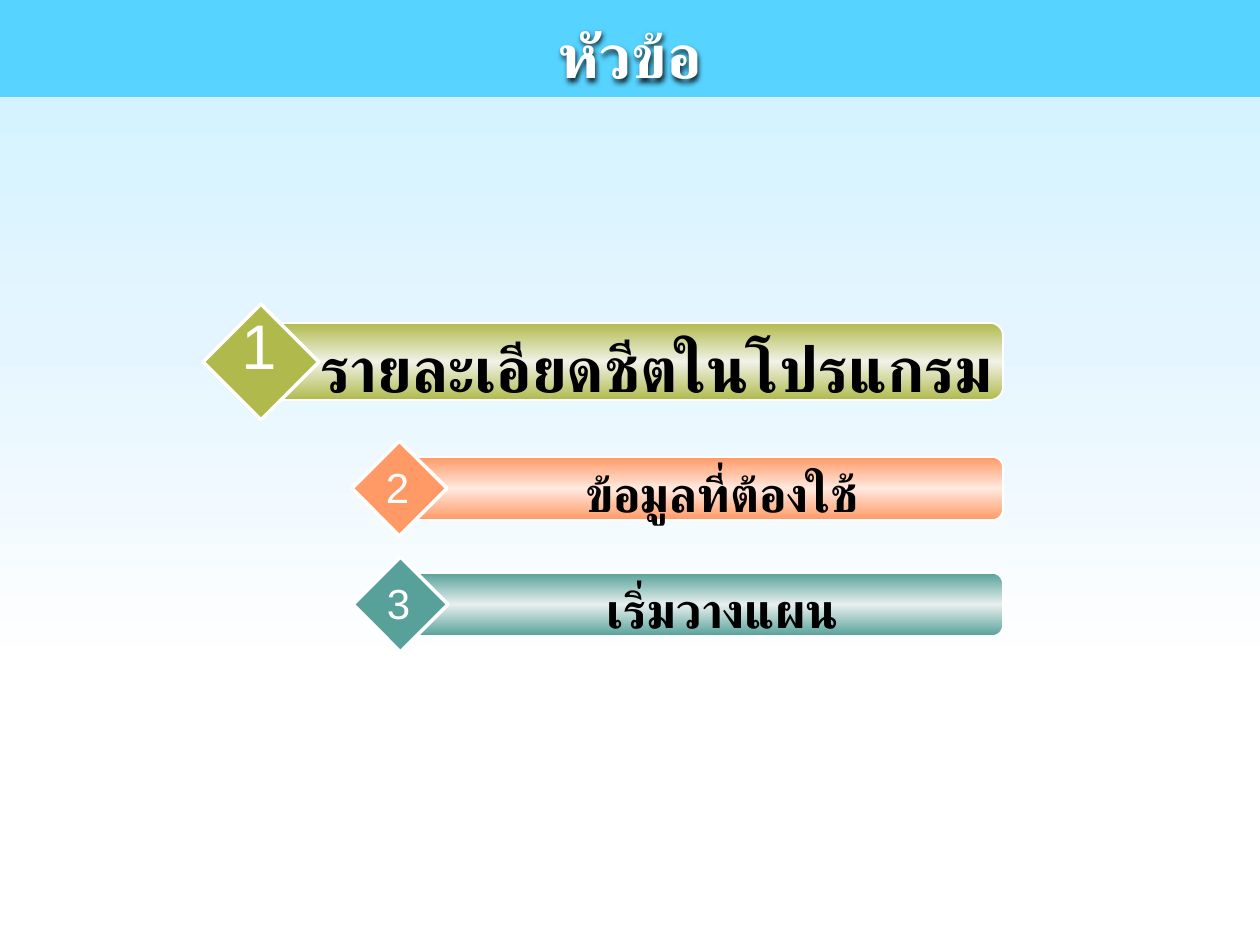
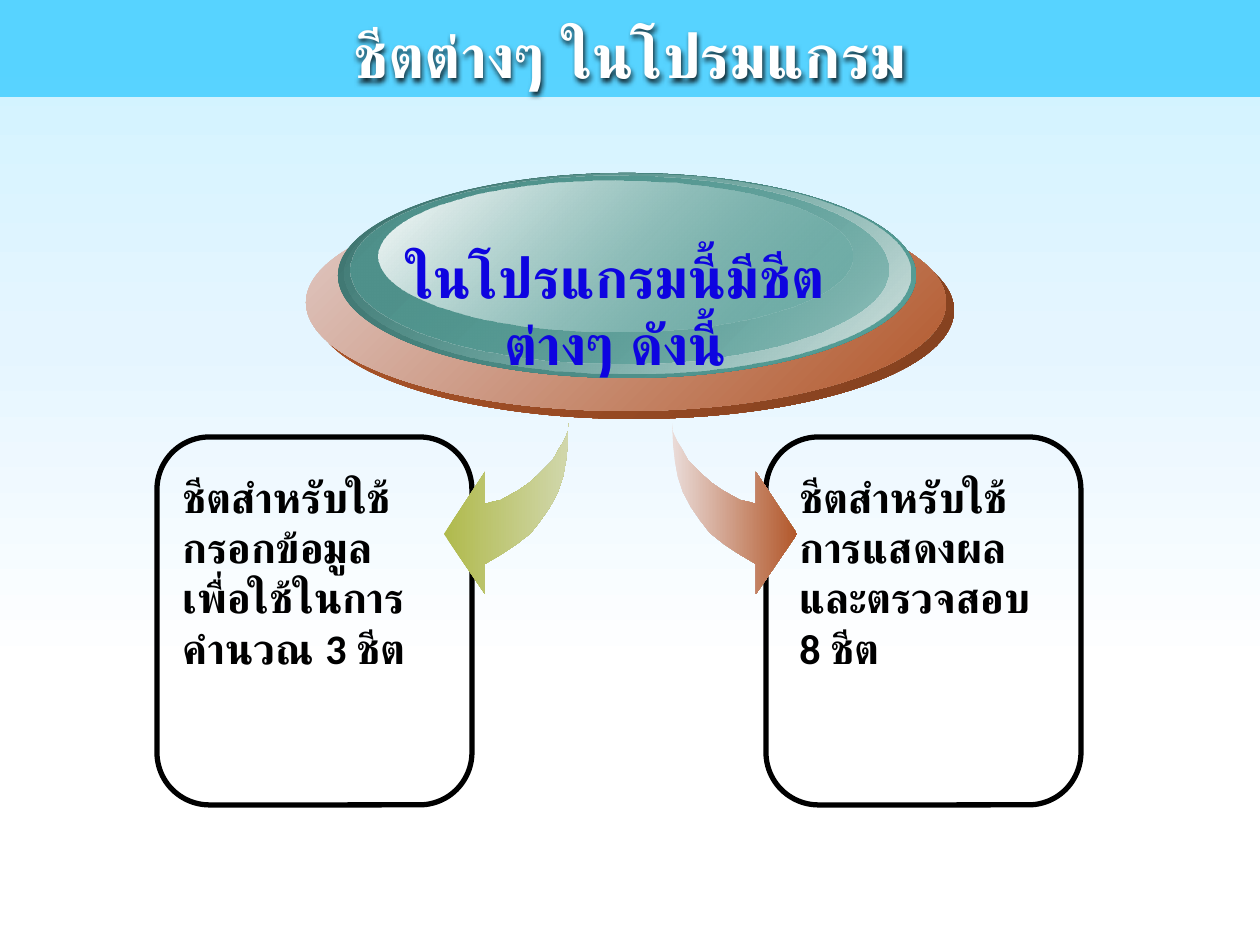
from lxml import etree
from pptx import Presentation
from pptx import util as u
from pptx.dml import color
from pptx.enum import shapes, text
from pptx.oxml import ns

PX = 914400 / 126
PAGE_WIDTH, PAGE_HEIGHT = 1260, 945
COLORS = {
    "band": "0DC0FF", "white": "FFFFFF", "black": "000000", "blue": "0E04E0",
    "sky": "D1F3FF", "pale_sky": "E5F5FF",
    "olive": "B0BA4C", "olive_light": "F1F2E8", "olive_soft": "D1D7AC",
    "teal": "57A19A", "teal_light": "E8EFEE", "teal_deep": "3E736E",
    "teal_mid": "4F918B", "teal_soft": "D8E4E2",
    "orange": "FF9966", "orange_light": "FFE9DF",
    "rust": "B2572A", "rust_deep": "82401F", "rust_soft": "E1CBC7", "rust_pale": "EADCD9",
}
TITLE = {"size": u.Pt(35), "bold": True}
LABEL = {"size": u.Pt(28), "bold": True}
LABEL_LARGE = {"size": u.Pt(36), "bold": True}
NUMBER = {"size": u.Pt(24)}
NUMBER_LARGE = {"size": u.Pt(36)}
CARD = {"size": u.Pt(24), "bold": True}
HEADING = {"size": u.Pt(32), "bold": True}
ROWS = [
    ("1", "รายละเอียดชีตในโปรแกรม", "olive", (203, 304, 116), -4, NUMBER_LARGE, LABEL_LARGE),
    ("2", "ข้อมูลที่ต้องใช้", "orange", (352, 441, 95), 14, NUMBER, LABEL),
    ("3", "เริ่มวางแผน", "teal", (353, 557, 95), 14, NUMBER, LABEL),
]
DISC_LAYERS = [
    ((61, 29, 640, 217), [(0, "rust", 100), (100, "rust_deep", 100)]),
    ((53, 21, 640, 217), [(0, "rust_soft", 100), (100, "rust", 100)]),
    ((85, 0, 578, 205), [(0, "teal_deep", 100), (100, "teal", 100)]),
    ((92, 1, 565, 200), [(0, "teal", 0), (100, "teal_soft", 100)]),
    ((97, 3, 538, 188), [(0, "teal_mid", 100), (100, "teal", 48)]),
    ((126, 8, 473, 151), [(0, "white", 100), (100, "teal", 38)]),
]
ARROW_POINTS = [
    (0, 0), (1, 20), (3, 38), (6, 54), (11, 69), (19, 84), (28, 97), (38, 110), (52, 121),
    (67, 131), (84, 141), (84, 171), (125, 111), (84, 49), (84, 81), (77, 79), (68, 77),
    (59, 72), (50, 67), (40, 60), (32, 53), (24, 45), (16, 37), (10, 26), (5, 18), (1, 9),
]
ARROW_WIDTH = 125


def emu(*lengths):
    return [u.Emu(round(length * PX)) for length in lengths]


def rgb(name):
    return color.RGBColor.from_string(COLORS[name])


def add_node(parent, tag, **values):
    return etree.SubElement(parent, ns.qn(tag), {key: str(value) for key, value in values.items()})


def add_alpha(node, percent):
    add_node(node, "a:alpha", val=percent * 1000)


def paint_gradient(fill, element, stops, angle):
    fill.gradient()
    gradient = next(element.iter(ns.qn("a:gradFill")))
    for child in list(gradient):
        gradient.remove(child)
    stop_list = add_node(gradient, "a:gsLst")
    for position, name, alpha in stops:
        stop = add_node(stop_list, "a:gs", pos=position * 1000)
        swatch = add_node(stop, "a:srgbClr", val=COLORS[name])
        if alpha < 100:
            add_alpha(swatch, alpha)
    add_node(gradient, "a:lin", ang=angle * 60000, scaled=0)


def style_line(shape, name=None, width=0):
    shape.shadow.inherit = False
    if name:
        shape.line.color.rgb = rgb(name)
        shape.line.width = u.Pt(width)
    else:
        shape.line.fill.background()


def add_preset(page, kind, box, line=None, width=0):
    shape = page.shapes.add_shape(kind, *emu(*box))
    style_line(shape, line, width)
    return shape


def write_text(frame, words, style, name, family="Calibri", align=text.PP_ALIGN.CENTER, wrap=True):
    for key, value in {"word_wrap": wrap, "auto_size": text.MSO_AUTO_SIZE.NONE,
                       "vertical_anchor": text.MSO_ANCHOR.TOP}.items():
        setattr(frame, key, value)
    para = frame.paragraphs[0]
    para.alignment = align
    span = para.add_run()
    span.text = words
    for key, value in {"name": family, **style}.items():
        setattr(span.font, key, value)
    span.font.color.rgb = rgb(name)
    add_node(span.font._element, "a:cs", typeface="Arial")


def add_text(page, box, *words, **options):
    write_text(page.shapes.add_textbox(*emu(*box)).text_frame, *words, **options)


def add_page(deck, words):
    page = deck.slides.add_slide(deck.slide_layouts[5])
    band = add_preset(page, shapes.MSO_SHAPE.RECTANGLE, (0, 0, PAGE_WIDTH, 97))
    band.fill.solid()
    band.fill.fore_color.rgb = rgb("band")
    add_alpha(next(band.element.iter(ns.qn("a:srgbClr"))), 62)

    title = page.shapes.title
    page.shapes.element.append(title.element)
    title.left, title.top, title.width, title.height = emu(0, 11, PAGE_WIDTH, 86)
    write_text(title.text_frame, words, TITLE, "white")
    title.fill.background()
    effects = add_node(title.element.spPr, "a:effectLst")
    shadow = add_node(effects, "a:outerShdw", blurRad=38100, dist=19050, dir=5400000, algn="ctr")
    add_alpha(add_node(shadow, "a:srgbClr", val=COLORS["black"]), 80)
    return page


def add_topic_row(page, number, words, name, place, number_shift, number_style, label_style):
    left, top, size = place
    right = 1003
    bar_height = round(size * 0.66)
    bar_left = left + round(size * 0.55)
    bar_top = top + (size - bar_height) // 2
    bar = add_preset(page, shapes.MSO_SHAPE.ROUNDED_RECTANGLE,
                     (bar_left, bar_top, right - bar_left, bar_height), "white", 1)
    stops = [(0, name, 100), (50, name + "_light", 100), (100, name, 100)]
    paint_gradient(bar.fill, bar.element, stops, 90)
    diamond = add_preset(page, shapes.MSO_SHAPE.DIAMOND, (left, top, size, size), "white", 2)
    diamond.fill.solid()
    diamond.fill.fore_color.rgb = rgb(name)
    label_left = left + round(size * 0.89)
    add_text(page, (label_left, bar_top, right + 4 - label_left, bar_height + 10),
             words, label_style, "black", wrap=False)
    add_text(page, (left - 2, top + number_shift, size, bar_height),
             number, number_style, "white", family="Arial", wrap=False)


def add_disc(page, left, top):
    for (x, y, width, height), stops in DISC_LAYERS:
        layer = add_preset(page, shapes.MSO_SHAPE.OVAL, (left + x, top + y, width, height))
        paint_gradient(layer.fill, layer.element, stops, 45)
    add_text(page, (left + 129, top + 63, 467, 81),
             "ในโปรแกรมนี้มีชีตต่างๆ ดังนี้", HEADING, "blue")


def add_card(page, left, top, words, indent):
    card = add_preset(page, shapes.MSO_SHAPE.ROUNDED_RECTANGLE, (left, top, 315, 368), "black", 3)
    card.fill.background()
    add_text(page, (left + indent, top + 28, 281, 217), words, CARD, "black",
             align=text.PP_ALIGN.LEFT)


def add_arrow(page, left, top, names, mirrored=False):
    points = [(left + (ARROW_WIDTH - x if mirrored else x), top + y) for x, y in ARROW_POINTS]
    builder = page.shapes.build_freeform(*points[0], scale=PX)
    builder.add_line_segments(points[1:], close=True)
    arrow = builder.convert_to_shape()
    style_line(arrow)
    start, end = names
    paint_gradient(arrow.fill, arrow.element, [(0, start, 100), (100, end, 100)], 0)


def build_topics(deck):
    page = add_page(deck, "หัวข้อ")
    for row in ROWS:
        add_topic_row(page, *row)


def build_sheets(deck):
    page = add_page(deck, "ชีตต่างๆ ในโปรมแกรม")
    add_card(page, 157, 437, "ชีตสำหรับใช้กรอกข้อมูลเพื่อใช้ในการคำนวณ 3 ชีต", 13)
    add_arrow(page, 444, 423, ("olive", "olive_soft"), mirrored=True)
    add_disc(page, 253, 173)
    add_card(page, 766, 437, "ชีตสำหรับใช้การแสดงผลและตรวจสอบ 8 ชีต", 21)
    add_arrow(page, 672, 423, ("rust_pale", "rust"))


def main():
    deck = Presentation()
    deck.slide_width, deck.slide_height = emu(PAGE_WIDTH, PAGE_HEIGHT)
    master = deck.slide_master
    stops = [(5, "sky", 100), (36, "pale_sky", 100), (71, "white", 100)]
    paint_gradient(master.background.fill, master.element, stops, 90)
    build_topics(deck)
    build_sheets(deck)
    deck.save("out.pptx")


if __name__ == "__main__":
    main()
